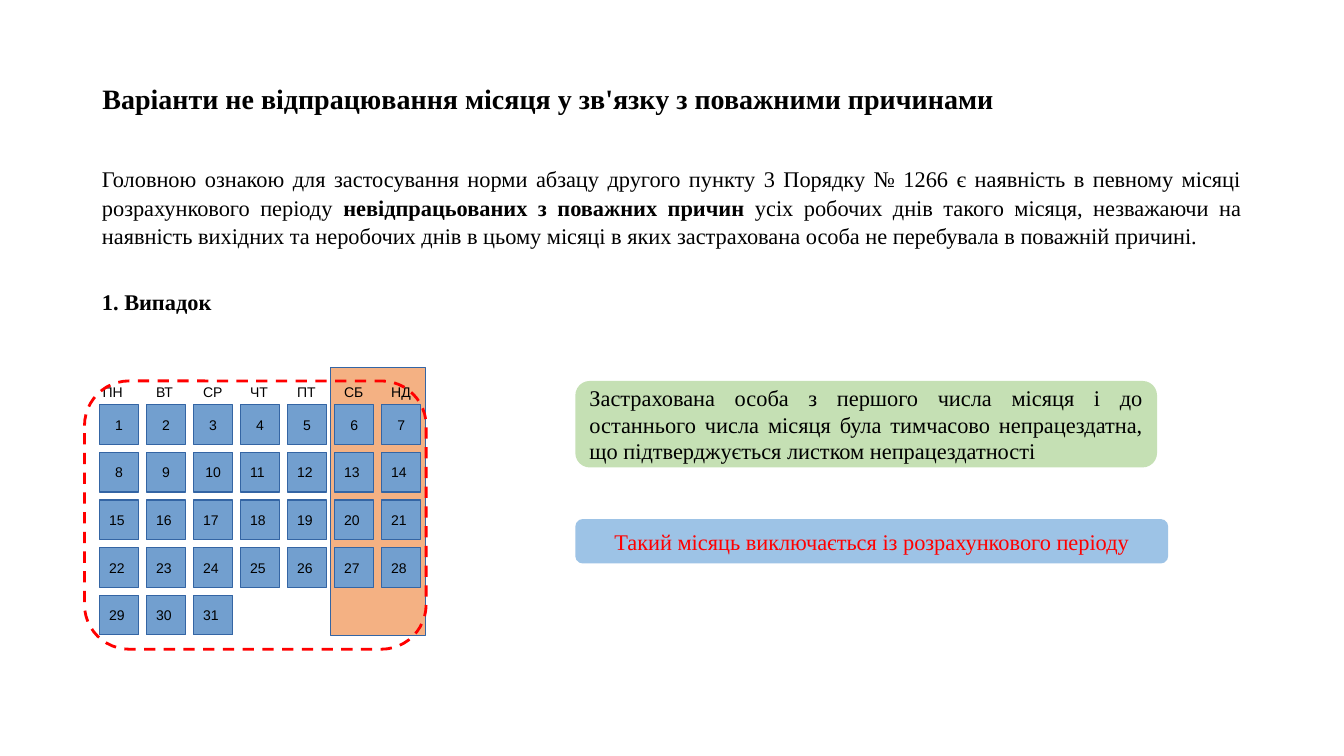
from dataclasses import dataclass

from pptx import Presentation
from pptx.dml.color import RGBColor
from pptx.enum.dml import MSO_LINE
from pptx.enum.shapes import MSO_SHAPE
from pptx.enum.text import MSO_ANCHOR, PP_ALIGN
from pptx.util import Cm, Pt

RECTANGLE = MSO_SHAPE.RECTANGLE
ROUNDED = MSO_SHAPE.ROUNDED_RECTANGLE
DASH = MSO_LINE.DASH
TOP, MIDDLE = MSO_ANCHOR.TOP, MSO_ANCHOR.MIDDLE
LEFT, CENTER, JUSTIFY = PP_ALIGN.LEFT, PP_ALIGN.CENTER, PP_ALIGN.JUSTIFY

WEEKDAYS = ["ПН", "ВТ", "СР", "ЧТ", "ПТ", "СБ", "НД"]
DAYS_IN_MONTH = 31
LAST_CENTERED_DAY = 10
GRID_LEFT, GRID_TOP = 2.5, 10.2
COLUMN_STEP, ROW_STEP, DAY_SIZE = 1.185, 1.2, 1.0

TITLE = "Варіанти не відпрацювання місяця у зв'язку з поважними причинами"
RULE = [
    ("Головною ознакою для застосування норми абзацу другого пункту 3 Порядку № 1266 "
     "є наявність в певному місяці розрахункового періоду ", False),
    ("невідпрацьованих з поважних причин", True),
    (" усіх робочих днів такого місяця, незважаючи на наявність вихідних та неробочих "
     "днів в цьому місяці в яких застрахована особа не перебувала в поважній причині.", False),
]
CASE = "1. Випадок"
SITUATION = ("Застрахована особа з першого числа місяця і до останнього числа місяця була "
             "тимчасово непрацездатна, що підтверджується листком непрацездатності")
OUTCOME = "Такий місяць виключається із розрахункового періоду"


@dataclass(frozen=True)
class Theme:
    """Colours, fonts and type sizes of the slide."""

    text: str = "000000"
    accent: str = "FF0000"
    day: str = "729FCF"
    border: str = "3465A4"
    weekend: str = "F4B183"
    situation: str = "C5E0B4"
    outcome: str = "9DC3E6"
    serif: str = "Times New Roman"
    sans: str = "Arial"
    title_size: int = 20
    body_size: int = 16
    calendar_size: int = 10


class SlideBuilder:
    """Draws styled elements on one slide, with places given in centimetres."""

    def __init__(self, slide, theme):
        self.slide = slide
        self.theme = theme

    def add_text(self, shape, parts, size, font, align, anchor=TOP, color=None):
        frame = shape.text_frame
        frame.word_wrap = True
        frame.vertical_anchor = anchor
        paragraph = frame.paragraphs[0]
        paragraph.alignment = align
        for text, bold in parts:
            run = paragraph.add_run()
            run.text = text
            run.font.bold = bold
            run.font.size = Pt(size)
            run.font.name = font
            run.font.color.rgb = RGBColor.from_string(color or self.theme.text)
        return paragraph

    def text_box(self, place, parts, size, font, align):
        box = self.slide.shapes.add_textbox(*map(Cm, place))
        return self.add_text(box, parts, size, font, align)

    def prose(self, place, parts, size):
        paragraph = self.text_box(place, parts, size, self.theme.serif, JUSTIFY)
        paragraph.line_spacing = 1.07
        paragraph.space_before = Pt(10)

    def panel(self, kind, place, fill=None, line=None, line_width=0):
        shape = self.slide.shapes.add_shape(kind, *map(Cm, place))
        shape.shadow.inherit = False
        if fill:
            shape.fill.solid()
            shape.fill.fore_color.rgb = RGBColor.from_string(fill)
        else:
            shape.fill.background()
        if line:
            shape.line.color.rgb = RGBColor.from_string(line)
            shape.line.width = Pt(line_width)
        else:
            shape.line.fill.background()
        return shape

    def message(self, place, text, fill, align, color=None):
        shape = self.panel(ROUNDED, place, fill)
        self.add_text(shape, [(text, False)], self.theme.body_size, self.theme.serif,
                      align, MIDDLE, color)

    def calendar(self):
        theme = self.theme
        for index in range(DAYS_IN_MONTH):
            row, column = divmod(index, len(WEEKDAYS))
            place = (GRID_LEFT + column * COLUMN_STEP, GRID_TOP + row * ROW_STEP,
                     DAY_SIZE, DAY_SIZE)
            day = index + 1
            align = CENTER if day <= LAST_CENTERED_DAY else LEFT
            shape = self.panel(RECTANGLE, place, theme.day, theme.border)
            self.add_text(shape, [(str(day), False)], theme.calendar_size, theme.sans,
                          align, MIDDLE)
        for column, weekday in enumerate(WEEKDAYS):
            left = GRID_LEFT + column * COLUMN_STEP if column else 2.34
            width = 1.02 if column else 1.35
            self.text_box((left, 9.53, width, 0.66), [(weekday, False)],
                          theme.calendar_size, theme.sans, LEFT)


def main():
    presentation = Presentation()
    presentation.slide_width, presentation.slide_height = Cm(33.87), Cm(19.05)
    slide = presentation.slides.add_slide(presentation.slide_layouts[6])
    theme = Theme()
    builder = SlideBuilder(slide, theme)

    builder.panel(RECTANGLE, (8.33, 9.25, 2.39, 6.76), theme.weekend, theme.border)
    builder.prose((2.33, 1.88, 29.22, 1.63), [(TITLE, True)], theme.title_size)
    builder.calendar()
    builder.prose((2.32, 3.99, 29.22, 2.67), RULE, theme.body_size)
    builder.prose((2.32, 7.09, 29.22, 1.12), [(CASE, True)], theme.body_size)
    builder.message((14.5, 9.6, 14.66, 2.18), SITUATION, theme.situation, JUSTIFY)
    builder.message((14.5, 13.08, 14.94, 1.12), OUTCOME, theme.outcome, CENTER, theme.accent)
    month_outline = builder.panel(ROUNDED, (2.13, 9.6, 8.61, 6.76), None, theme.accent, 2)
    month_outline.line.dash_style = DASH

    presentation.save("out.pptx")


if __name__ == "__main__":
    main()
